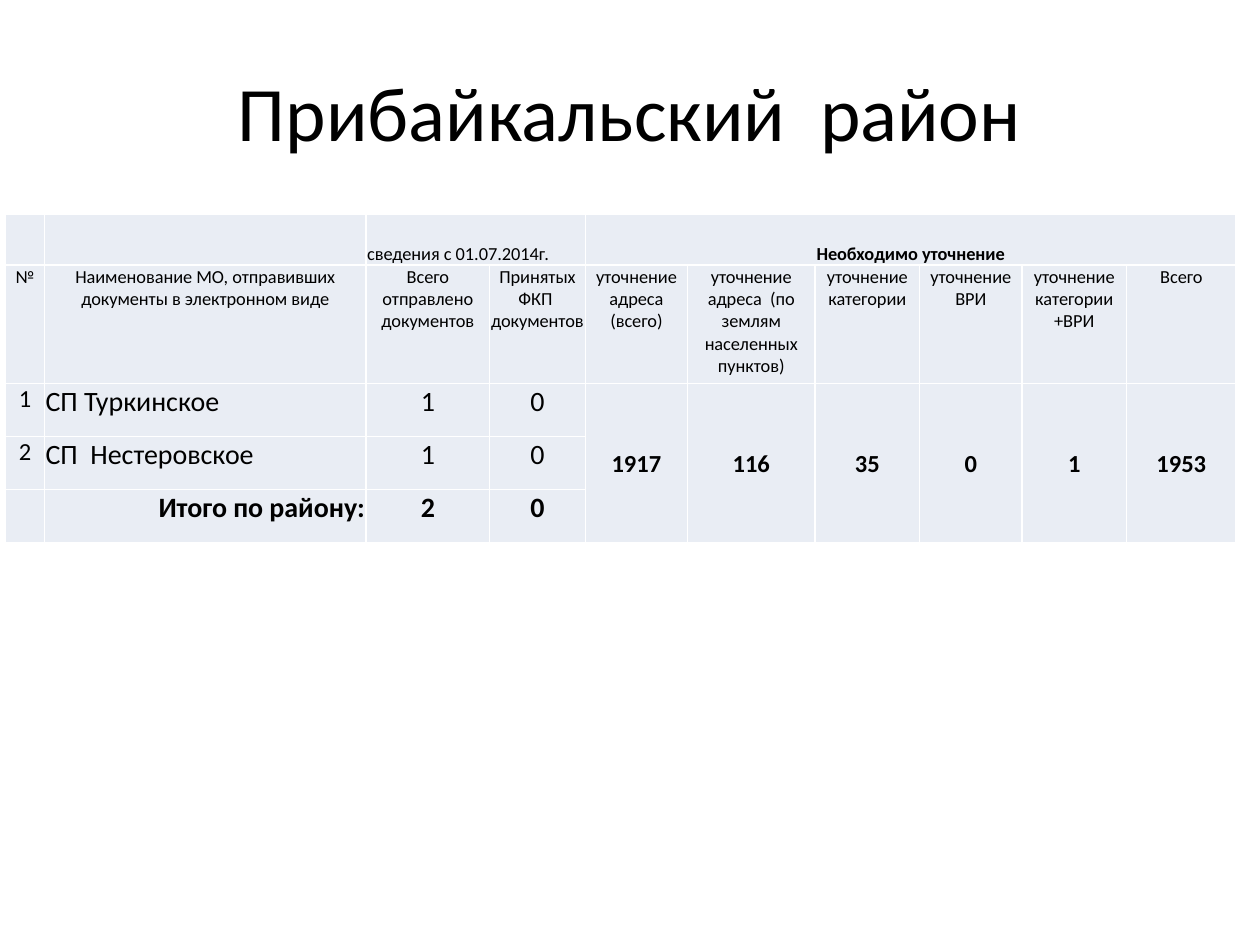
import pptx
import pptx.dml.color
import pptx.enum.text
import pptx.util

Cm = pptx.util.Cm
Pt = pptx.util.Pt
ALIGN = pptx.enum.text.PP_ALIGN
ANCHOR = pptx.enum.text.MSO_ANCHOR

BLACK = pptx.dml.color.RGBColor(0x00, 0x00, 0x00)
CELL_FILL = pptx.dml.color.RGBColor(0xE9, 0xED, 0xF4)
FONT = "Calibri"

COLUMN_WIDTHS = [0.79, 6.48, 2.49, 1.93, 2.06, 2.57, 2.11, 2.06, 2.11, 2.21]
ROW_HEIGHTS = [1.02, 2.39, 1.07, 1.07, 1.07]
HEADINGS = [
    "№",
    "Наименование МО, отправивших документы в электронном виде",
    "Всего отправлено документов",
    "Принятых ФКП  документов",
    "уточнение адреса (всего)",
    "уточнение адреса  (по землям населенных пунктов)",
    "уточнение категории",
    "уточнение ВРИ",
    "уточнение категории +ВРИ",
    "Всего",
]
SETTLEMENTS = [
    ("1", "СП Туркинское", "1", "0"),
    ("2", "СП  Нестеровское", "1", "0"),
]
TOTALS = ("Итого по району:", "2", "0")
CLARIFICATIONS = ["1917", "116", "35", "0", "1", "1953"]
FIRST_CLARIFICATION = 4


def add_text(text_frame, text, size, bold=False, align=ALIGN.CENTER):
    """Add one formatted run to the first paragraph of a text frame."""
    paragraph = text_frame.paragraphs[0]
    paragraph.alignment = align
    run = paragraph.add_run()
    run.text = text
    run.font.name = FONT
    run.font.size = Pt(size)
    run.font.bold = bold
    run.font.color.rgb = BLACK


def add_title(slide, text):
    """Place and fill the title placeholder."""
    title = slide.shapes.title
    title.left, title.top = Cm(1.9), Cm(0.53)
    title.width, title.height = Cm(21.6), Cm(3.4)
    title.text_frame.vertical_anchor = ANCHOR.MIDDLE
    add_text(title.text_frame, text, 44)


def add_grid(slide):
    """Add the table with its column widths, row heights and cell fills."""
    shape = slide.shapes.add_table(
        len(ROW_HEIGHTS), len(COLUMN_WIDTHS), Cm(0.11), Cm(4.32),
        Cm(sum(COLUMN_WIDTHS)), Cm(sum(ROW_HEIGHTS)))
    table = shape.table
    table.first_row = False
    table.horz_banding = False
    for column, width in zip(table.columns, COLUMN_WIDTHS):
        column.width = Cm(width)
    for row, height in zip(table.rows, ROW_HEIGHTS):
        row.height = Cm(height)
    for cell in table.iter_cells():
        cell.fill.solid()
        cell.fill.fore_color.rgb = CELL_FILL
        cell.margin_left = cell.margin_right = cell.margin_top = Cm(0.02)
        cell.margin_bottom = 0
    return table


def add_merged_text(table, first, last, text, size, anchor, **style):
    """Merge a block of cells and write its text."""
    cell = table.cell(*first)
    cell.merge(table.cell(*last))
    cell.vertical_anchor = anchor
    add_text(cell.text_frame, text, size, **style)


def fill_headings(table):
    """Write the group headings and the column headings."""
    add_merged_text(table, (0, 2), (0, 3), "сведения с 01.07.2014г.", 10.5,
                    ANCHOR.BOTTOM, align=ALIGN.LEFT)
    add_merged_text(table, (0, 4), (0, 9), "Необходимо уточнение", 10.5,
                    ANCHOR.BOTTOM, bold=True)
    for column, heading in enumerate(HEADINGS):
        add_text(table.cell(1, column).text_frame, heading, 10.5)


def fill_values(table):
    """Write the settlements, the totals and the clarification counts."""
    for row, (number, name, *counts) in enumerate(SETTLEMENTS, start=2):
        add_text(table.cell(row, 0).text_frame, number, 14)
        add_text(table.cell(row, 1).text_frame, name, 16, align=ALIGN.LEFT)
        for column, count in enumerate(counts, start=2):
            add_text(table.cell(row, column).text_frame, count, 16)
    last_row = len(ROW_HEIGHTS) - 1
    for column, text in enumerate(TOTALS, start=1):
        align = ALIGN.RIGHT if column == 1 else ALIGN.CENTER
        add_text(table.cell(last_row, column).text_frame, text, 16, True, align)
    for column, count in enumerate(CLARIFICATIONS, start=FIRST_CLARIFICATION):
        add_merged_text(table, (2, column), (last_row, column), count, 14,
                        ANCHOR.MIDDLE, bold=True)


def main():
    """Build and save the district slide."""
    presentation = pptx.Presentation()
    presentation.slide_width = Cm(25.4)
    presentation.slide_height = Cm(19.05)
    slide = presentation.slides.add_slide(presentation.slide_layouts[5])
    add_title(slide, "Прибайкальский  район")
    table = add_grid(slide)
    fill_headings(table)
    fill_values(table)
    presentation.save("out.pptx")


if __name__ == "__main__":
    main()
